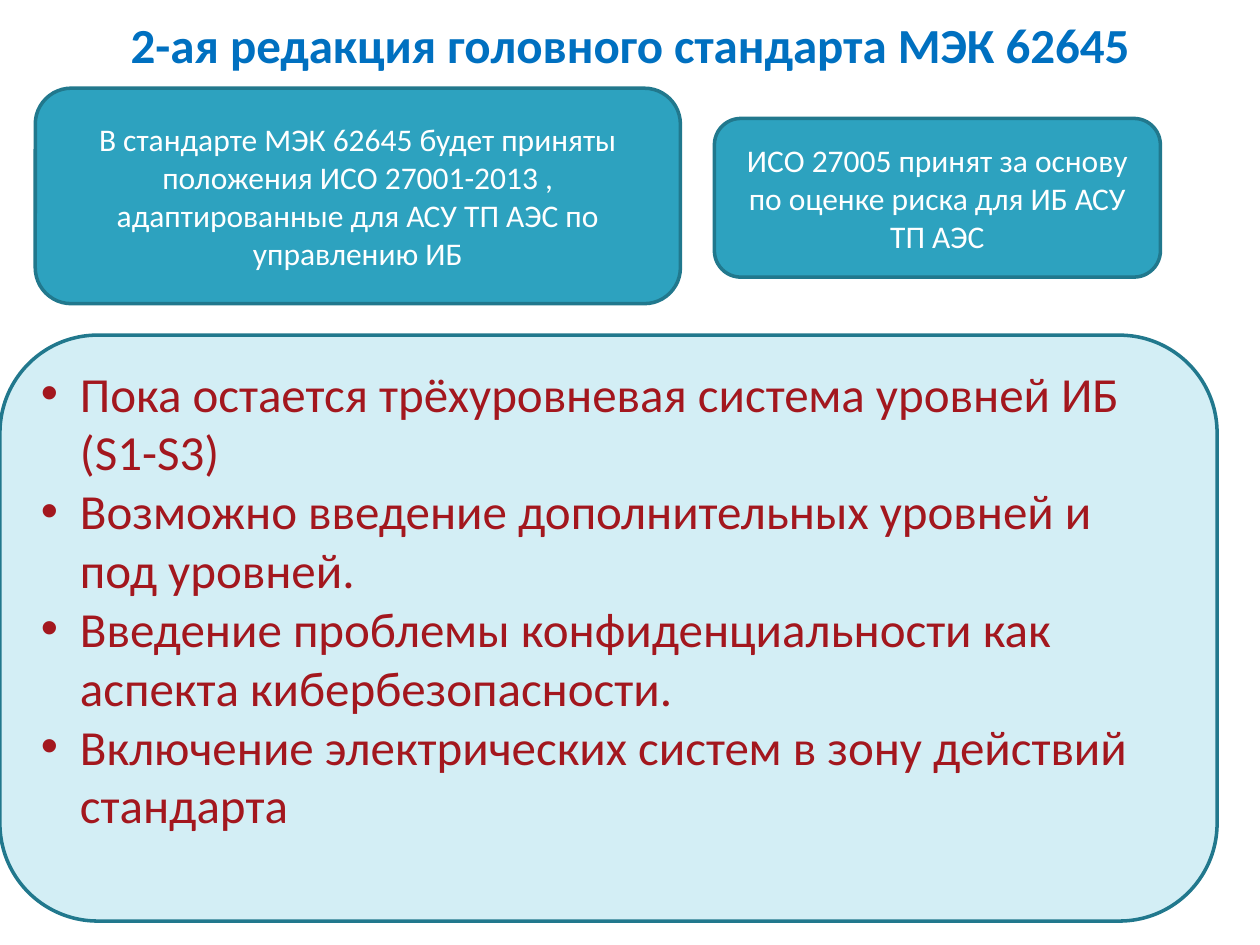
from lxml import etree
from pptx import Presentation
from pptx.dml.color import RGBColor
from pptx.enum import shapes, text
from pptx.oxml.ns import qn
from pptx.util import Inches, Pt

THEME = {
    "font": "Calibri",
    "heading": "0070C0",
    "teal": "2DA2BF",
    "pale": "D3EEF5",
    "border": "21788D",
    "white": "FFFFFF",
    "red": "A3171E",
    "large": 28,
    "small": 18,
    "line": 2,
}

HEADING = "2-ая редакция головного стандарта МЭК 62645"
HEADING_BOX = (0.5, 0, 9, 0.69)

STANDARDS = [
    ("В стандарте МЭК 62645 будет приняты положения ИСО 27001-2013 , "
     "адаптированные для АСУ ТП АЭС по управлению ИБ", (0.28, 0.7, 5.12, 1.71)),
    ("ИСО 27005 принят за основу по оценке риска для ИБ АСУ ТП АЭС",
     (5.67, 0.94, 3.54, 1.26)),
]

CHANGES = [
    "Пока остается трёхуровневая система уровней ИБ (S1-S3)",
    "Возможно введение дополнительных уровней и под уровней.",
    "Введение проблемы конфиденциальности как аспекта кибербезопасности.",
    "Включение электрических систем в зону действий стандарта",
]
CHANGES_BOX = (0, 2.66, 9.66, 4.65)
CHANGES_BOTTOM_INSET = 0.52
BULLET_INDENT = 0.31


def color(name):
    return RGBColor.from_string(THEME[name])


def place(shape, box):
    shape.left, shape.top, shape.width, shape.height = map(Inches, box)


def write(frame, lines, size, ink, align, bold=False):
    frame.text = "\n".join(lines)
    frame.word_wrap = True
    frame.vertical_anchor = text.MSO_ANCHOR.MIDDLE
    for paragraph in frame.paragraphs:
        paragraph.alignment = align
        for run in paragraph.runs:
            run.font.name = THEME["font"]
            run.font.size = Pt(THEME[size])
            run.font.bold = bold
            run.font.color.rgb = color(ink)


def add_panel(slide, box, fill):
    panel = slide.shapes.add_shape(
        shapes.MSO_SHAPE.ROUNDED_RECTANGLE, *map(Inches, box))
    panel.shadow.inherit = False
    panel.fill.solid()
    panel.fill.fore_color.rgb = color(fill)
    panel.line.color.rgb = color("border")
    panel.line.width = Pt(THEME["line"])
    return panel


def add_bullet(paragraph):
    properties = paragraph._p.get_or_add_pPr()
    indent = Inches(BULLET_INDENT)
    properties.set("marL", str(indent))
    properties.set("indent", str(-indent))
    etree.SubElement(properties, qn("a:buFont"), typeface="Arial")
    etree.SubElement(properties, qn("a:buChar"), char="•")


def main():
    deck = Presentation()
    deck.slide_width, deck.slide_height = Inches(10), Inches(7.5)
    slide = deck.slides.add_slide(deck.slide_layouts.get_by_name("Title Only"))

    heading = slide.shapes.title
    place(heading, HEADING_BOX)
    write(heading.text_frame, [HEADING], "large", "heading",
          text.PP_ALIGN.CENTER, bold=True)

    for statement, box in STANDARDS:
        panel = add_panel(slide, box, "teal")
        write(panel.text_frame, [statement], "small", "white",
              text.PP_ALIGN.CENTER)

    changes = add_panel(slide, CHANGES_BOX, "pale").text_frame
    write(changes, CHANGES, "large", "red", text.PP_ALIGN.LEFT)
    changes.margin_bottom = Inches(CHANGES_BOTTOM_INSET)
    for paragraph in changes.paragraphs:
        add_bullet(paragraph)

    deck.save("out.pptx")


if __name__ == "__main__":
    main()
